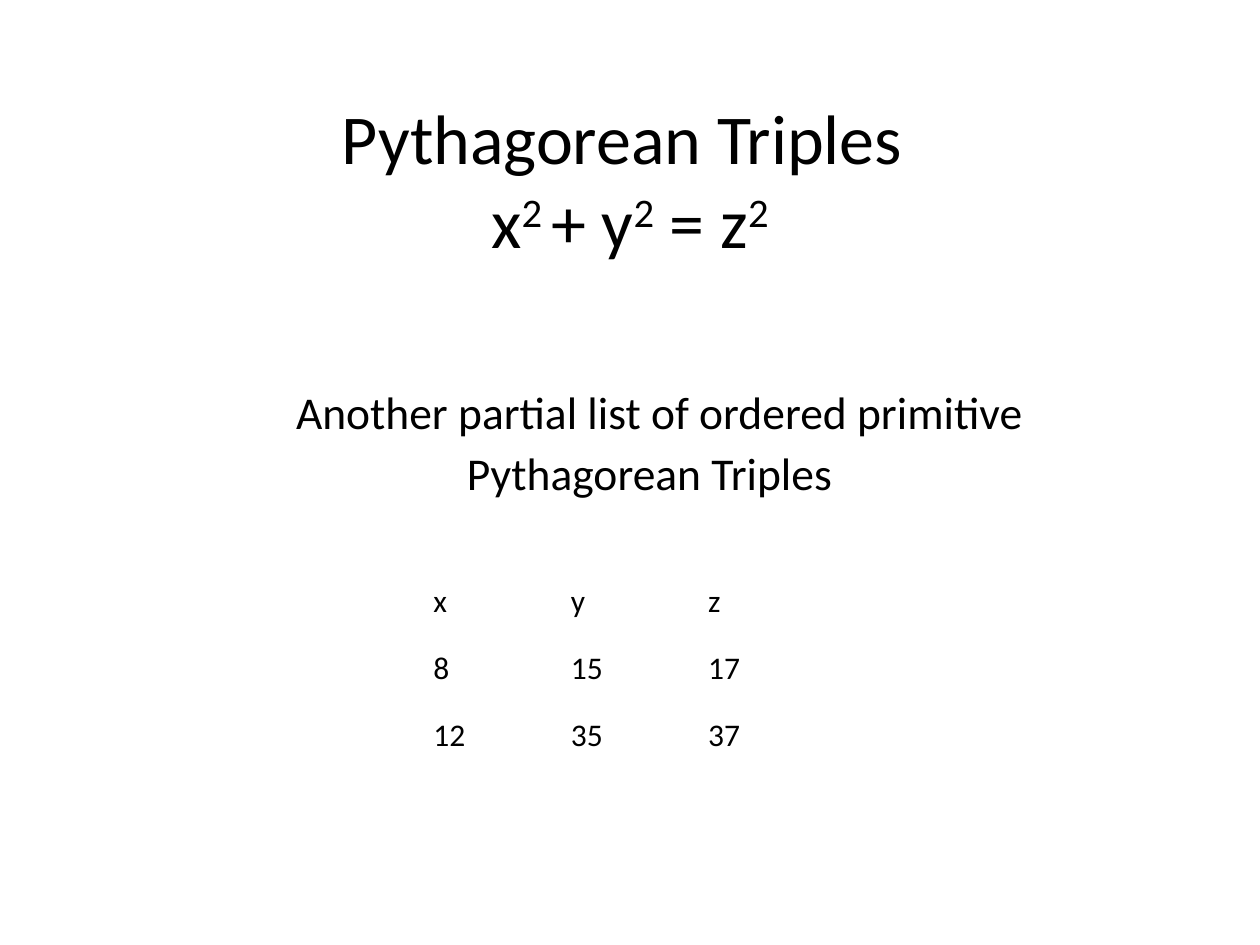
from pptx import Presentation
from pptx.dml.color import RGBColor
from pptx.enum.text import MSO_ANCHOR, PP_ALIGN
from pptx.util import Pt

BLACK = RGBColor(0, 0, 0)
FONT = "Calibri"


def add_run(paragraph, text, size):
    run = paragraph.add_run()
    run.text = text
    run.font.size = Pt(size)
    run.font.name = FONT
    run.font.color.rgb = BLACK
    return run


presentation = Presentation()
presentation.slide_width = Pt(720)
presentation.slide_height = Pt(540)
slide = presentation.slides.add_slide(presentation.slide_layouts[5])

# Title with the equation; exponents are raised
heading = slide.shapes.title
heading.left, heading.top, heading.width, heading.height = Pt(54), Pt(41.75), Pt(612), Pt(121)
heading.text_frame.vertical_anchor = MSO_ANCHOR.MIDDLE
equation = heading.text_frame.paragraphs[0]
equation.alignment = PP_ALIGN.CENTER
add_run(equation, "Pythagorean Triples ", 40)
equation.add_line_break()
for base, exponent in (("x", "2 "), ("+ y", "2"), (" = z", "2")):
    add_run(equation, base, 40)
    raised = add_run(equation, exponent, 40)
    raised.font._element.set("baseline", "30000")

# Introduction to the list, opened by a large no-break space
intro = slide.shapes.add_textbox(Pt(44), Pt(196), Pt(654.5), Pt(289.5))
intro.text_frame.word_wrap = True
sentence = intro.text_frame.paragraphs[0]
sentence.alignment = PP_ALIGN.CENTER
sentence.space_before = Pt(6)
sentence.line_spacing = 0.94
add_run(sentence, " ", 51)
add_run(sentence, "Another partial list of ordered primitive", 26)
sentence.add_line_break()
add_run(sentence, "Pythagorean Triples", 26)

# Table of triples, without fills or banding
triples = [("x", "y", "z"), (8, 15, 17), (12, 35, 37)]
triples_table = slide.shapes.add_table(
    len(triples), 3, Pt(240.5), Pt(329), Pt(235.5), Pt(115.2)).table
triples_table.first_row = False
triples_table.horz_banding = False
# The "No Style, No Grid" table style leaves out the borders
triples_table._tbl.tblPr.find("{*}tableStyleId").text = "{2D5ABB26-0587-4C30-8999-92F81FD0307C}"
for r, triple in enumerate(triples):
    for c, value in enumerate(triple):
        cell = triples_table.cell(r, c)
        cell.fill.background()
        add_run(cell.text_frame.paragraphs[0], str(value), 18)

presentation.save("out.pptx")
